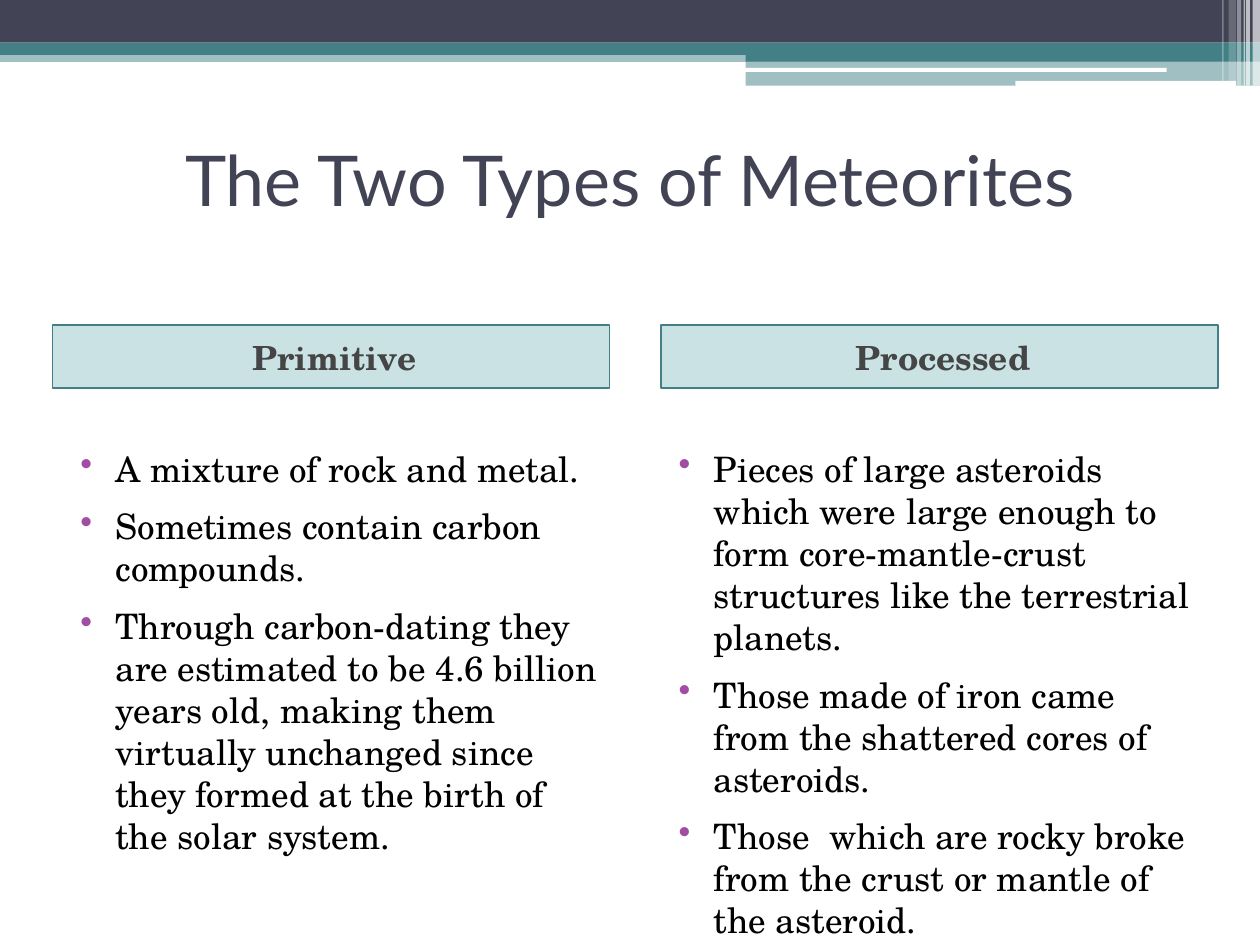
"""Build a slide that compares the two types of meteorites."""
from lxml import etree
from pptx import Presentation
from pptx.dml.color import RGBColor
from pptx.enum.shapes import MSO_SHAPE
from pptx.enum.text import MSO_ANCHOR, PP_ALIGN
from pptx.oxml.ns import qn
from pptx.util import Cm, Pt

RECT, ROUND = MSO_SHAPE.RECTANGLE, MSO_SHAPE.ROUNDED_RECTANGLE
MID, TOP = MSO_ANCHOR.MIDDLE, MSO_ANCHOR.TOP
CENTER, LEFT = PP_ALIGN.CENTER, PP_ALIGN.LEFT
HEX = {"navy": "424456", "teal": "438086", "aqua": "328E97", "white": "FFFFFF",
       "gray": "454545", "black": "000000", "plum": "A04DA3"}
SERIF = "TeX Gyre Schola"
FONTS = {
    "title": {"name": "Lato", "size": Pt(40)},
    "head": {"name": SERIF, "size": Pt(19), "bold": True},
    "body": {"name": SERIF, "size": Pt(20)},
}
PARAS = {
    "title": {"alignment": CENTER},
    "head": {"alignment": CENTER, "space_before": Pt(3)},
    "body": {"alignment": LEFT, "space_before": Pt(3), "space_after": Pt(6)},
}
INKS = {"title": "navy", "head": "gray", "body": "black"}

prs = Presentation()
prs.slide_width, prs.slide_height = Cm(25.4), Cm(19.05)
slide = prs.slides.add_slide(prs.slide_layouts[6])


def add_bar(kind, box, hue, alpha=100):
    bar = slide.shapes.add_shape(kind, *map(Cm, box))
    bar.shadow.inherit = False
    bar.fill.solid()
    bar.fill.fore_color.rgb = RGBColor.from_string(HEX[hue])
    bar.line.fill.background()
    if alpha < 100:
        tint = bar.element.spPr.find(qn("a:solidFill"))[0]
        etree.SubElement(tint, qn("a:alpha"), val=str(alpha * 1000))
    return bar


def add_text(shape, style, lines, anchor):
    frame = shape.text_frame
    frame.word_wrap = True
    frame.vertical_anchor = anchor
    for i, line in enumerate(lines):
        para = frame.paragraphs[0] if i == 0 else frame.add_paragraph()
        run = para.add_run()
        run.text = line
        run.font.color.rgb = RGBColor.from_string(HEX[INKS[style]])
        for target, values in ((para, PARAS[style]), (run.font, FONTS[style])):
            for name, value in values.items():
                setattr(target, name, value)
        props = para._p.get_or_add_pPr()
        if style == "head":
            props.set("marL", str(Cm(0.13)))
        if style == "body":
            props.set("marL", str(Cm(1.02)))
            props.set("indent", str(Cm(-0.71)))
            tint = etree.SubElement(props, qn("a:buClr"))
            etree.SubElement(tint, qn("a:srgbClr"), val=HEX["plum"])
            etree.SubElement(props, qn("a:buChar"), char="•")


for box, hue, alpha in (
    ((0, 1.02, 25.4, 0.23), "teal", 50),
    ((0, 0, 25.4, 0.86), "navy", 100),
    ((0, 0.86, 25.4, 0.25), "teal", 100),
    ((15.03, 0.99, 10.37, 0.25), "teal", 100),
    ((15.03, 1.22, 10.37, 0.51), "teal", 50),
):
    add_bar(RECT, box, hue, alpha)

for box in ((15.01, 1.37, 8.51, 0.08), (20.47, 1.63, 4.45, 0.1)):
    add_bar(ROUND, box, "white")

for left, width, height, alpha in (
    (25.25, 0.15, 1.73, 65), (25.12, 0.08, 1.73, 65), (25.07, 0.03, 1.73, 60),
    (24.94, 0.08, 1.73, 40), (24.77, 0.15, 1.63, 20), (24.64, 0.03, 1.63, 30),
):
    add_bar(RECT, (left, 0, width, height), "white", alpha)

title = slide.shapes.add_textbox(Cm(1.06), Cm(2.12), Cm(23.28), Cm(2.96))
add_text(title, "title", ["The Two Types of Meteorites"], MID)

WIDE = 11.23
for head, x, left, height, points in (
    ("Primitive", 1.06, 1.06, 8.89, [
        "A mixture of rock and metal.",
        "Sometimes contain carbon compounds.",
        "Through carbon-dating they are estimated to be 4.6 billion years old, "
        "making them virtually unchanged since they formed at the birth of "
        "the solar system."]),
    ("Processed", 13.33, 13.12, 10.16, [
        "Pieces of large asteroids which were large enough to form "
        "core-mantle-crust structures like the terrestrial planets.",
        "Those made of iron came from the shattered cores of asteroids.",
        "Those  which are rocky broke from the crust or mantle of the asteroid."]),
):
    label = add_bar(RECT, (x, 6.56, WIDE, 1.27), "aqua", 25)
    label.line.color.rgb = RGBColor.from_string(HEX["teal"])
    label.line.width = Pt(1)
    add_text(label, "head", [head], MID)
    body = slide.shapes.add_textbox(Cm(left), Cm(8.89), Cm(WIDE), Cm(height))
    add_text(body, "body", points, TOP)

prs.save("out.pptx")
